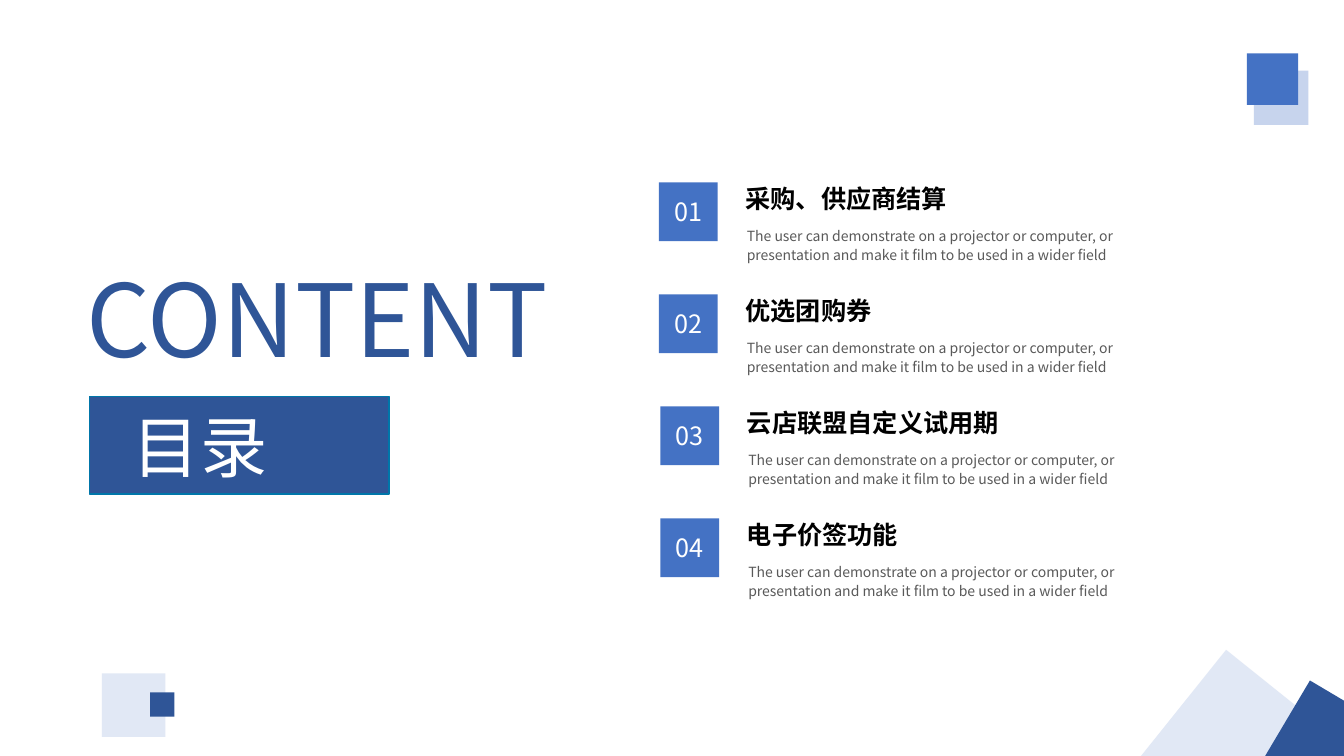
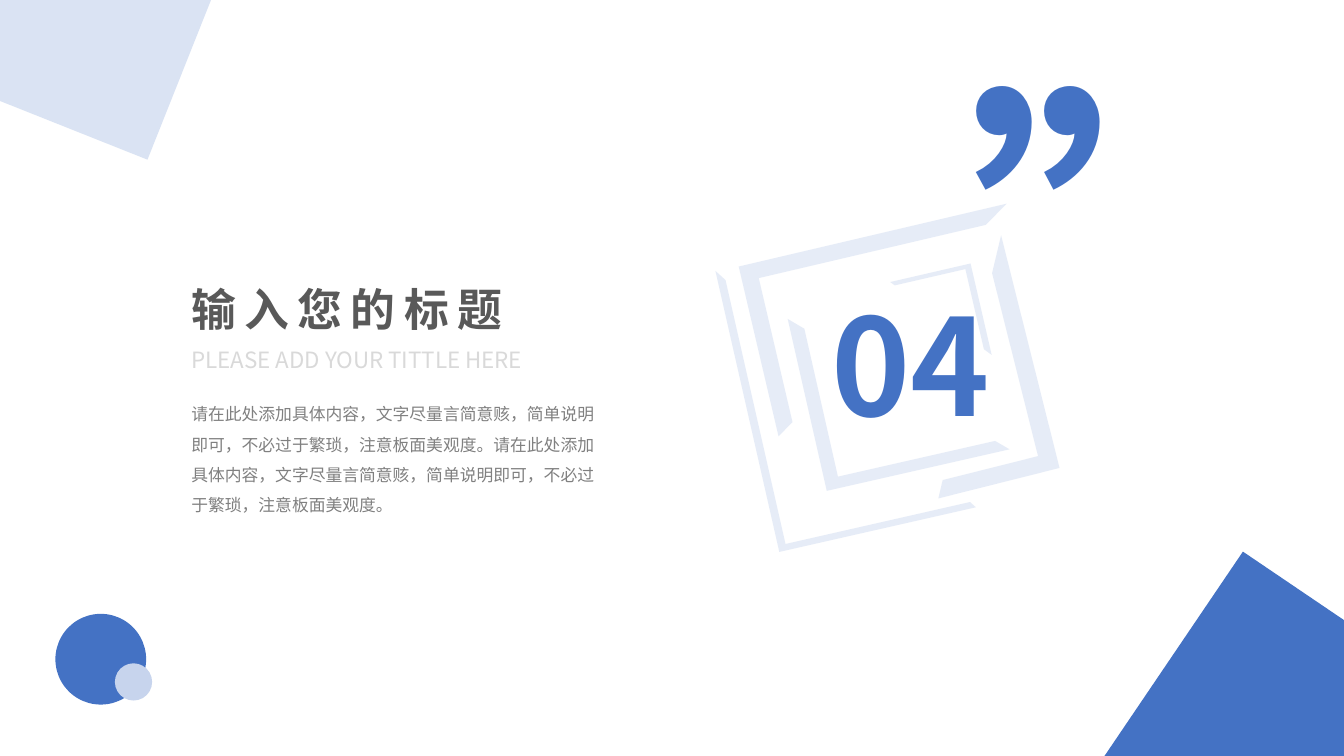
from pptx import Presentation
from pptx.dml.color import RGBColor
from pptx.enum.shapes import MSO_SHAPE as Kind
from pptx.enum.text import MSO_ANCHOR as Anchor, MSO_AUTO_SIZE as Fit, PP_ALIGN as Align
from pptx.oxml.ns import qn
from pptx.util import Pt
from lxml import etree

# Shared look
FONT = "Noto Sans CJK SC"
HUES = {
    "blue": "4472C4", "navy": "2F5597", "pale": "C7D4ED", "mist": "DAE3F3",
    "edge": "0076A9", "white": "FFFFFF", "black": "000000",
    "dark": "595959", "gray": "808080", "light": "D9D9D9",
}

# Contents slide
BLURB = ("The user can demonstrate on a projector or computer, or "
         "presentation and make it film to be used in a wider field")
TOPICS = ["采购、供应商结算", "优选团购券", "云店联盟自定义试用期", "电子价签功能"]
STEP = 80
# left, top, side, turn, colour, opacity
SQUARES = [
    (895.7, 50.4, 38.9, 0, "pale", 100),
    (830.2, 486, 108, 308.7, "pale", 53),
    (72.7, 481, 45.4, 0, "pale", 53),
    (107.3, 494.6, 17.3, 0, "navy", 100),
    (890.6, 38.2, 36.7, 0, "blue", 100),
    (914.4, 498.2, 65.5, 300.7, "navy", 100),
]

# Section slide
TITLE = "输入您的标题"
SUB = "PLEASE ADD YOUR TITTLE HERE"
HINT = "请在此处添加具体内容，文字尽量言简意赅，简单说明即可，不必过于繁琐，注意板面美观度。"
# box, turn, adjustments, flipped
FRAMES = [
    ((578.9, 207.4, 126, 133.9), 257.2, (0.08, 0.065), False),
    ((501.1, 205.9, 205.9, 144), 257.2, (0.039, 0.032), False),
    ((638.6, 198, 67, 59), 77, (0.077, 0.052), False),
    ((539.3, 166.3, 196.6, 124.6), 346.8, (0.091, 0.097), False),
    ((607, 217.4, 171.4, 89.3), 75.9, (0.144, 0.134), True),
]
CORNERS = [(-64.8, -136.8, 218.2, 201.7, "mist"), (815, 432.7, 198.7, 34.1, "blue")]
DOTS = [(39.6, 438.5, 64.8, "blue"), (82.1, 473.8, 26.6, "pale")]


def rgb(hue):
    return RGBColor.from_string(HUES[hue])


def block(slide, box, hue, kind=Kind.RECTANGLE, turn=0, alpha=100, edge=None):
    """Flat shape, optionally turned, see-through or outlined."""
    shape = slide.shapes.add_shape(kind, *map(Pt, box))
    shape.shadow.inherit = False
    shape.rotation = turn
    shape.fill.solid()
    shape.fill.fore_color.rgb = rgb(hue)
    if alpha < 100:
        color = shape.fill._xPr.find(".//" + qn("a:srgbClr"))
        etree.SubElement(color, qn("a:alpha")).set("val", str(alpha * 1000))
    if edge:
        shape.line.color.rgb = rgb(edge)
        shape.line.width = Pt(1)
    else:
        shape.line.fill.background()
    return shape


def write(shape, text, size, hue, bold=False, align=Align.LEFT, lead=None, gap=0):
    """Put one styled paragraph into a shape."""
    shape.text_frame.text = text
    para = shape.text_frame.paragraphs[0]
    para.alignment = align
    if lead:
        para.line_spacing = lead
    run = para.runs[0]
    font = run.font
    font.size, font.bold, font.name = Pt(size), bold, FONT
    font.color.rgb = rgb(hue)
    props = run._r.get_or_add_rPr()
    etree.SubElement(props, qn("a:ea")).set("typeface", FONT)
    if gap:
        props.set("spc", str(gap * 100))


def label(slide, box, text, size, hue, wrap=True, turn=0, **style):
    """Text box that grows with its text."""
    area = slide.shapes.add_textbox(*map(Pt, box))
    area.rotation = turn
    write(area, text, size, hue, **style)
    area.text_frame.word_wrap = wrap
    area.text_frame.auto_size = Fit.SHAPE_TO_FIT_TEXT


def contents(slide):
    # Heading
    block(slide, (64, 283, 214, 70), "navy", edge="edge")
    label(slide, (54.7, 189.4, 378.7, 85.7), "CONTENT", 72, "navy",
          align=Align.JUSTIFY, lead=0.9)
    label(slide, (87.8, 285.8, 162, 65.5), "目录", 48, "white", align=Align.JUSTIFY)

    # Numbered topics; the lower pair sits one point to the right
    for i, topic in enumerate(TOPICS):
        x, y = 470.7 + i // 2, 130.3 + i * STEP
        tile = block(slide, (x, y, 42, 42), "blue")
        write(tile, f"{i + 1:02}", 18, "white", align=Align.CENTER)
        tile.text_frame.vertical_anchor = Anchor.MIDDLE
        label(slide, (x + 54.7, y - 2.9, 202.3, 28.8), topic, 18, "black", bold=True)
        label(slide, (x + 55.7, y + 27.2, 280.8, 47.5), BLURB, 10, "dark", lead=1.14)

    # Corner squares
    for x, y, side, turn, hue, alpha in SQUARES:
        block(slide, (x, y, side, side), hue, turn=turn, alpha=alpha)


def section(slide):
    # Broken frames around the number
    for box, turn, cuts, flip in FRAMES:
        frame = block(slide, box, "blue", Kind.HALF_FRAME, turn, 13)
        for i, cut in enumerate(cuts):
            frame.adjustments[i] = cut
        if flip:
            frame._element.spPr.find(qn("a:xfrm")).set("flipH", "1")

    # Corners, quote mark and dots
    for x, y, side, turn, hue in CORNERS:
        block(slide, (x, y, side, side), hue, turn=turn)
    label(slide, (811.4, -123.8, 126, 296.6), "“", 239, "blue", turn=180, bold=True)
    for x, y, side, hue in DOTS:
        block(slide, (x, y, side, side), hue, Kind.OVAL)

    # Number and text
    label(slide, (586.8, 198, 133.9, 123.8), "04", 96, "blue", wrap=False, bold=True)
    label(slide, (129.6, 198, 285, 46), TITLE, 32, "dark",
          bold=True, align=Align.JUSTIFY, gap=6)
    label(slide, (129.6, 243.4, 346.3, 26.6), SUB, 16, "light")
    label(slide, (129.6, 277.9, 311.8, 94.3), HINT * 2, 12, "gray", lead=1.5)


def main():
    deck = Presentation()
    deck.slide_width, deck.slide_height = Pt(960), Pt(540)
    for draw in (contents, section):
        draw(deck.slides.add_slide(deck.slide_layouts[6]))
    deck.save("out.pptx")


if __name__ == "__main__":
    main()
